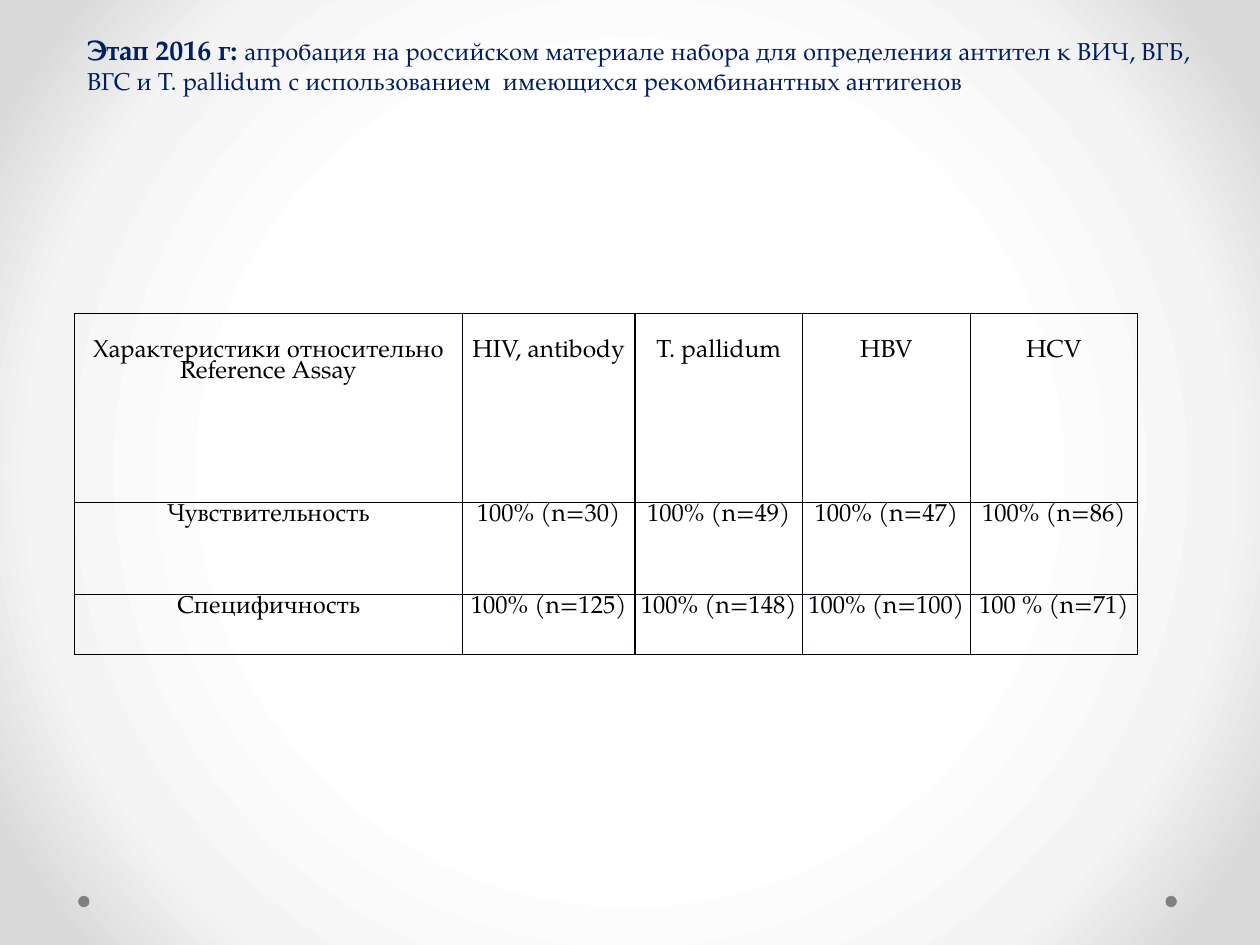
import pptx
import pptx.dml.color
import pptx.enum.shapes
import pptx.enum.text
import pptx.oxml
import pptx.oxml.ns
import pptx.util

COLORS = {
    "title": "002060",
    "text": "000000",
    "border": "00000A",
    "dot": "808080",
    "center": "FFFFFF",
    "middle": "F4F4F4",
    "edge": "DADADA",
}
BACKGROUND_STOPS = [(50, "center"), (76, "middle"), (92, "edge")]
TITLE_RUNS = [
    ("Этап 2016 г: ", 16, True),
    (
        "апробация на российском материале набора для определения антител "
        "к ВИЧ, ВГБ, ВГС и T. рallidum с использованием  имеющихся "
        "рекомбинантных антигенов",
        14,
        False,
    ),
]
RESULTS = [
    ["Характеристики относительно Reference Assay", "HIV, antibody", "T. pallidum", "HBV", "HCV"],
    ["Чувствительность", "100% (n=30)", "100% (n=49)", "100% (n=47)", "100% (n=86)"],
    ["Специфичность", "100% (n=125)", "100% (n=148)", "100% (n=100)", "100 % (n=71)"],
]
COLUMN_WIDTHS = [30.8, 13.7, 13.3, 13.3, 13.3]
ROW_HEIGHTS = [20, 9.7, 6.4]


class SlideBuilder:
    """Holds the style and the current slide; lengths are percentages of the slide."""

    font = "TeX Gyre Pagella"
    body_size = 14

    def __init__(self, presentation):
        self.presentation = presentation
        self.slide = presentation.slides.add_slide(presentation.slide_layouts[6])

    def across(self, percent):
        return round(self.presentation.slide_width * percent / 100)

    def down(self, percent):
        return round(self.presentation.slide_height * percent / 100)

    def color(self, name):
        return pptx.dml.color.RGBColor.from_string(COLORS[name])

    def format_run(self, run, size, color, bold=False):
        run.font.name = self.font
        run.font.size = pptx.util.Pt(size)
        run.font.bold = bold
        run.font.color.rgb = self.color(color)

    def background(self, stops):
        fill = self.slide.background.fill
        fill.gradient()
        namespace = pptx.oxml.ns.nsdecls("a")
        stop_xml = "".join(
            f'<a:gs pos="{position * 1000}"><a:srgbClr val="{COLORS[name]}"/></a:gs>'
            for position, name in stops
        )
        gradient = pptx.oxml.parse_xml(
            f'<a:gradFill {namespace} rotWithShape="1"><a:gsLst>{stop_xml}</a:gsLst>'
            '<a:path path="circle"><a:fillToRect l="50000" t="50000" r="50000" b="50000"/>'
            "</a:path></a:gradFill>"
        )
        properties = self.slide.background._cSld.bg.bgPr
        properties.replace(properties.find(pptx.oxml.ns.qn("a:gradFill")), gradient)

    def dot(self, left, top, diameter):
        size = self.across(diameter)
        shape = self.slide.shapes.add_shape(
            pptx.enum.shapes.MSO_SHAPE.OVAL, self.across(left), self.down(top), size, size
        )
        shape.shadow.inherit = False
        shape.fill.solid()
        shape.fill.fore_color.rgb = self.color("dot")
        shape.line.fill.background()

    def title(self, left, top, width, height, runs):
        shape = self.slide.shapes.add_textbox(
            self.across(left), self.down(top), self.across(width), self.down(height)
        )
        shape.text_frame.word_wrap = True
        shape.text_frame.auto_size = pptx.enum.text.MSO_AUTO_SIZE.SHAPE_TO_FIT_TEXT
        paragraph = shape.text_frame.paragraphs[0]
        for text, size, bold in runs:
            run = paragraph.add_run()
            run.text = text
            self.format_run(run, size, "title", bold)

    def table(self, left, top, widths, heights, rows):
        table = self.slide.shapes.add_table(
            len(rows), len(widths), self.across(left), self.down(top),
            self.across(sum(widths)), self.down(sum(heights)),
        ).table
        table.first_row = table.horz_banding = False
        for column, width in zip(table.columns, widths):
            column.width = self.across(width)
        for index, (row, height) in enumerate(zip(table.rows, heights)):
            row.height = self.down(height)
            for cell, text in zip(row.cells, rows[index]):
                self.cell(cell, text, 0.22 if index == 0 else 0.02)

    def cell(self, cell, text, margin_top):
        cell.fill.background()
        cell.margin_left = cell.margin_right = pptx.util.Inches(0.03)
        cell.margin_top = pptx.util.Inches(margin_top)
        cell.margin_bottom = pptx.util.Inches(0.02)
        cell.text_frame.text = text
        paragraph = cell.text_frame.paragraphs[0]
        paragraph.alignment = pptx.enum.text.PP_ALIGN.CENTER
        paragraph.line_spacing = 0.82
        self.format_run(paragraph.runs[0], self.body_size, "text")
        properties = cell._tc.get_or_add_tcPr()
        for index, side in enumerate(("lnL", "lnR", "lnT", "lnB")):
            border = pptx.oxml.parse_xml(
                f'<a:{side} {pptx.oxml.ns.nsdecls("a")} w="{pptx.util.Pt(0.75)}"><a:solidFill>'
                f'<a:srgbClr val="{COLORS["border"]}"/></a:solidFill></a:{side}>'
            )
            properties.insert(index, border)


def main():
    presentation = pptx.Presentation()
    presentation.slide_width = pptx.util.Inches(10)
    presentation.slide_height = pptx.util.Inches(7.5)
    builder = SlideBuilder(presentation)
    builder.background(BACKGROUND_STOPS)
    for left in (92.5, 6.2):
        builder.dot(left, 94.8, 0.9)
    builder.table(5.9, 33.2, COLUMN_WIDTHS, ROW_HEIGHTS, RESULTS)
    builder.title(5.9, 2.8, 89.8, 8.13, TITLE_RUNS)
    presentation.save("out.pptx")


if __name__ == "__main__":
    main()
